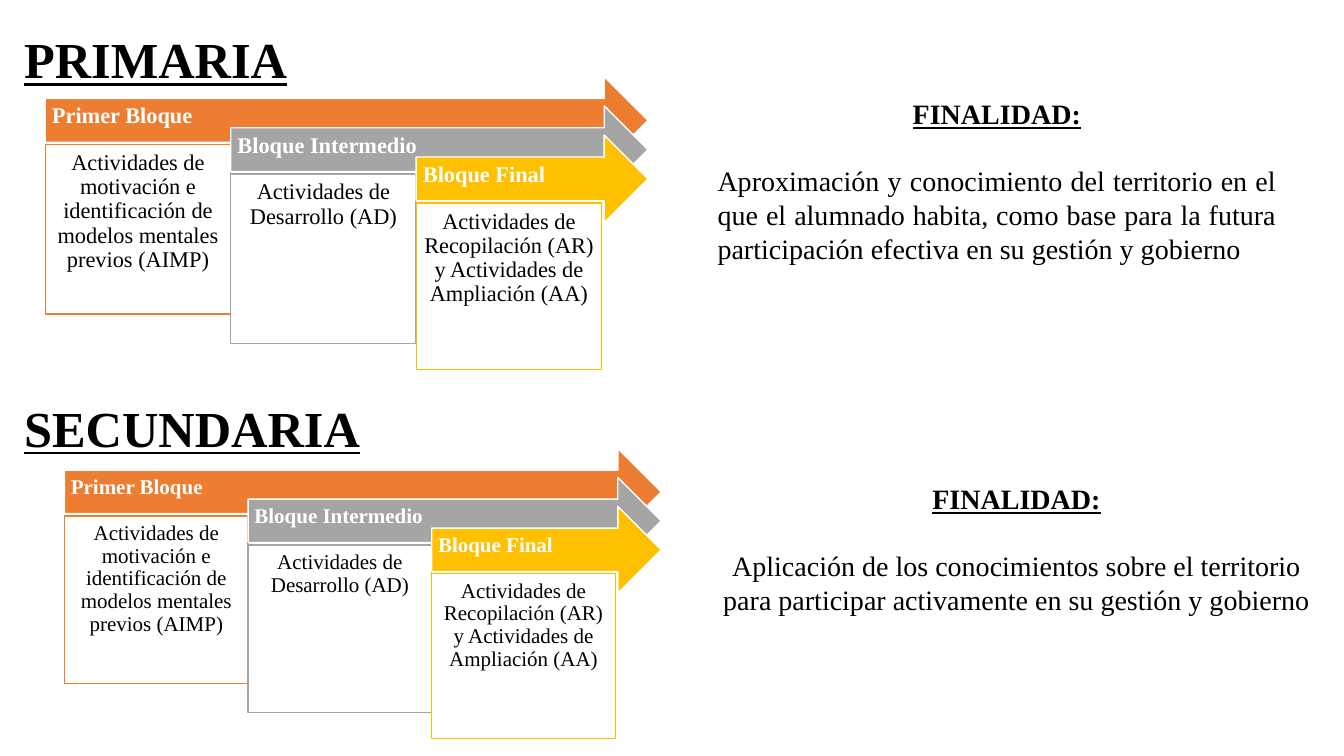
"""Build the slide on the blocks and aims of each school stage."""
from pptx import Presentation
from pptx.dml.color import RGBColor
from pptx.enum.shapes import MSO_SHAPE
from pptx.enum.text import MSO_ANCHOR, MSO_AUTO_SIZE, PP_ALIGN
from pptx.util import Inches, Pt

ARROW, RECT = MSO_SHAPE.RIGHT_ARROW, MSO_SHAPE.RECTANGLE
TOP, MIDDLE = MSO_ANCHOR.TOP, MSO_ANCHOR.MIDDLE
LEFT, CENTER, JUSTIFY = PP_ALIGN.LEFT, PP_ALIGN.CENTER, PP_ALIGN.JUSTIFY
GROW = MSO_AUTO_SIZE.SHAPE_TO_FIT_TEXT

BLOCKS = [
    ("Primer Bloque", "ED7D31", 22.4,
     "Actividades de motivación e identificación de modelos mentales previos (AIMP)"),
    ("Bloque Intermedio", "A5A5A5", 22.4, "Actividades de Desarrollo (AD)"),
    ("Bloque Final", "FFC000", 22,
     "Actividades de Recopilación (AR) y Actividades de Ampliación (AA)"),
]
STAGES = [
    dict(title="PRIMARIA", title_y=3.07, origin=(3.37, 10.13), scale=1, size=16,
         aim_box=(52.65, 12.13, 43.05, 23.73), align=JUSTIFY,
         aim="Aproximación y conocimiento del territorio en el que el alumnado habita, "
             "como base para la futura participación efectiva en su gestión y gobierno"),
    dict(title="SECUNDARIA", title_y=51.87, origin=(4.8, 59.33), scale=0.99, size=15,
         aim_box=(52.65, 63.07, 45.98, 19.33), align=CENTER,
         aim="Aplicación de los conocimientos sobre el territorio para participar "
             "activamente en su gestión y gobierno"),
]


def rgb(value):
    """Return the colour for a hex string."""
    return RGBColor.from_string(value)


def apply(target, values):
    """Set each named value on the target."""
    for name, value in values.items():
        setattr(target, name, value)


class Deck:
    """Hold the style and slide; lengths are percentages of the slide's size."""

    FONT, INK, PAPER = "Times New Roman", "000000", "FFFFFF"

    def __init__(self):
        """Open a blank widescreen slide."""
        self.prs = Presentation()
        apply(self.prs, dict(slide_width=Inches(13.333), slide_height=Inches(7.5)))
        self.s = self.prs.slides.add_slide(self.prs.slide_layouts[6])

    def area(self, x, y, w, h):
        """Convert percentages to slide lengths."""
        cx, cy = self.prs.slide_width / 100, self.prs.slide_height / 100
        return int(x * cx), int(y * cy), int(w * cx), int(h * cy)

    def add_text(self, p, text, color=INK, para=None, **font):
        """Add one run with its paragraph and font formats."""
        apply(p, para or {})
        r = p.add_run()
        r.text = text
        apply(r.font, dict(name=self.FONT, **font))
        r.font.color.rgb = rgb(color)

    def shape(self, kind, box, fill, line, frame):
        """Draw a filled and outlined shape and return its text frame."""
        sp = self.s.shapes.add_shape(kind, *self.area(*box))
        sp.shadow.inherit = False
        sp.fill.solid()
        sp.fill.fore_color.rgb = rgb(fill)
        sp.line.color.rgb = rgb(line)
        sp.line.width = Pt(1)
        apply(sp.text_frame, dict(word_wrap=True, **frame))
        return sp.text_frame

    def textbox(self, box):
        """Add a wrapping text box and return its text frame."""
        tf = self.s.shapes.add_textbox(*self.area(*box)).text_frame
        tf.word_wrap = True
        return tf

    def title(self, text, y):
        """Add a stage title."""
        tf = self.textbox((1.05, y, 75, 6.67))
        self.add_text(tf.paragraphs[0], text, size=Pt(36), bold=True, underline=True)

    def process(self, origin, scale, size):
        """Draw the stepped arrows, each with its activities below."""
        x0, y0 = origin
        pad = Pt(size * 0.3)
        for i, (name, color, depth, activities) in enumerate(BLOCKS):
            x, y = x0 + 13.8 * scale * i, y0 + 3.87 * scale * i
            frame = dict(margin_left=pad, margin_top=pad)
            tf = self.shape(ARROW, (x, y, (44.85 - 13.8 * i) * scale, 11.6 * scale),
                            color, self.PAPER,
                            dict(frame, margin_right=Pt(20), margin_bottom=Pt(10),
                                 vertical_anchor=MIDDLE))
            self.add_text(tf.paragraphs[0], name, self.PAPER,
                          dict(alignment=LEFT, line_spacing=0.9), size=Pt(size), bold=True)
            tf = self.shape(RECT, (x, y + 9 * scale, 13.8 * scale, depth * scale),
                            self.PAPER, color,
                            dict(frame, margin_right=pad, margin_bottom=pad,
                                 vertical_anchor=TOP))
            self.add_text(tf.paragraphs[0], activities, self.INK,
                          dict(alignment=CENTER, line_spacing=0.9), size=Pt(size))

    def aim(self, box, text, align):
        """Add the aim of a stage under its heading."""
        tf = self.textbox(box)
        tf.auto_size = GROW
        self.add_text(tf.paragraphs[0], "FINALIDAD:", para=dict(alignment=CENTER),
                      size=Pt(20), bold=True, underline=True)
        self.add_text(tf.add_paragraph(), text,
                      para=dict(alignment=align, space_before=Pt(24)), size=Pt(20))


def main():
    """Build and save the slide."""
    deck = Deck()
    for stage in STAGES:
        deck.title(stage["title"], stage["title_y"])
        deck.process(stage["origin"], stage["scale"], stage["size"])
        deck.aim(stage["aim_box"], stage["aim"], stage["align"])
    deck.prs.save("out.pptx")


if __name__ == "__main__":
    main()
